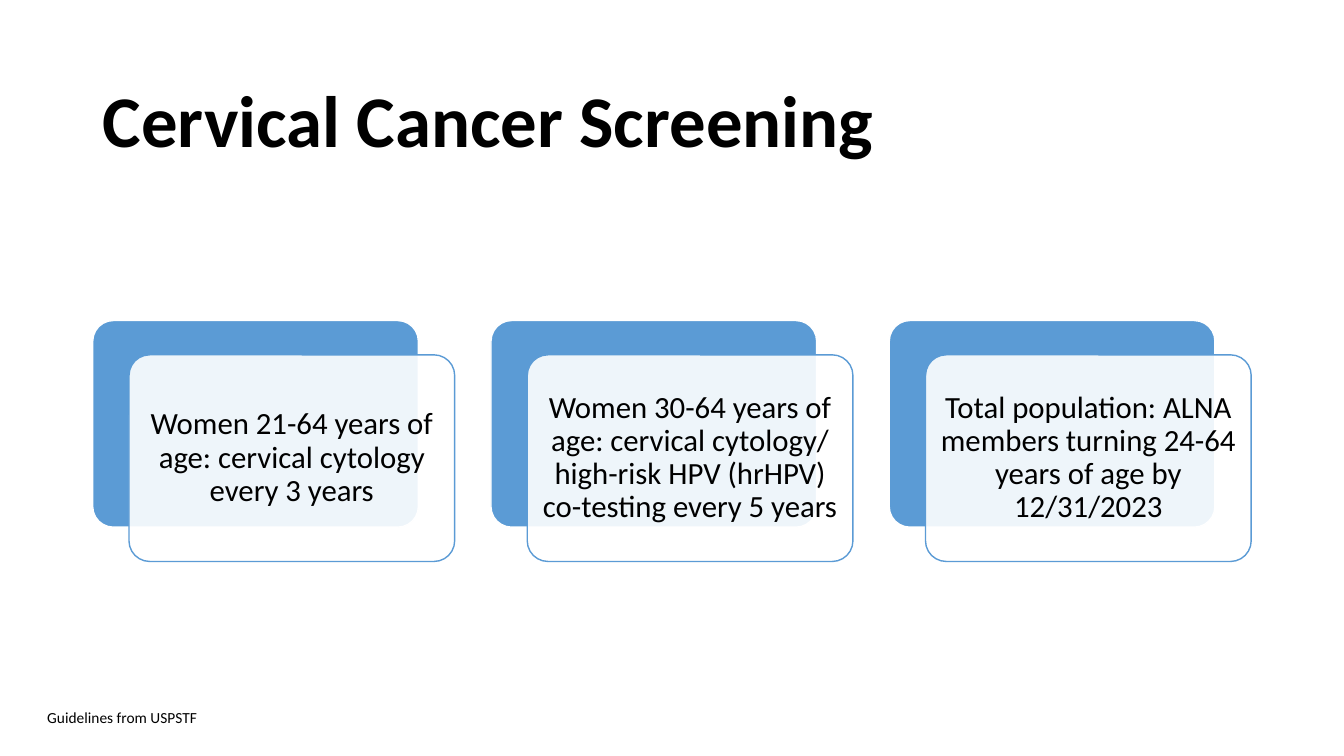
"""Build the cervical cancer screening slide with three layered cards."""
from lxml import etree
from pptx import Presentation
from pptx.dml.color import RGBColor
from pptx.enum.shapes import MSO_SHAPE
from pptx.enum.text import MSO_ANCHOR, PP_ALIGN
from pptx.oxml.ns import qn
from pptx.util import Inches, Pt

ROUNDED = MSO_SHAPE.ROUNDED_RECTANGLE
MIDDLE = MSO_ANCHOR.MIDDLE
LEFT, CENTER = PP_ALIGN.LEFT, PP_ALIGN.CENTER

COLORS = {"blue": "5B9BD5", "white": "FFFFFF", "text": "000000"}
FONT = "Calibri"
TITLE_ONLY = 5

CARD_LEFT, CARD_TOP, CARD_STEP = 0.92, 3.18, 3.95
CARD_WIDTH, CARD_HEIGHT = 3.23, 2.05
FRONT_SHIFT_X, FRONT_SHIFT_Y = 0.36, 0.34
GUIDELINES = [
    "Women 21-64 years of age: cervical cytology every 3 years",
    "Women 30-64 years of age: cervical cytology/ high-risk HPV (hrHPV) "
    "co-testing every 5 years",
    "Total population: ALNA members turning 24-64 years of age by 12/31/2023",
]


class SlideBuilder:
    def __init__(self, deck):
        self.slide = deck.slides.add_slide(deck.slide_layouts[TITLE_ONLY])

    def color(self, name):
        return RGBColor.from_string(COLORS[name])

    def set_text(self, shape, text, size, align=LEFT, spacing=1.0, bold=False):
        shape.text_frame.word_wrap = True
        para = shape.text_frame.paragraphs[0]
        para.text = text
        para.alignment = align
        para.line_spacing = spacing
        para.font.name = FONT
        para.font.size = Pt(size)
        para.font.bold = bold
        para.font.color.rgb = self.color("text")

    def title(self, text):
        title = self.slide.shapes.title
        title.left, title.top = Inches(0.92), Inches(0.61)
        title.width, title.height = Inches(11.5), Inches(1.24)
        title.text_frame.vertical_anchor = MIDDLE
        self.set_text(title, text, 52, spacing=0.9, bold=True)

    def panel(self, left, top, fill, line, opacity=100):
        panel = self.slide.shapes.add_shape(
            ROUNDED, Inches(left), Inches(top),
            Inches(CARD_WIDTH), Inches(CARD_HEIGHT))
        panel.shadow.inherit = False
        panel.adjustments[0] = 0.1
        panel.fill.solid()
        panel.fill.fore_color.rgb = self.color(fill)
        panel.line.color.rgb = self.color(line)
        panel.line.width = Pt(1)
        if opacity < 100:
            tint = panel.element.spPr.find(qn("a:solidFill"))[0]
            etree.SubElement(tint, qn("a:alpha"), val=str(opacity * 1000))
        return panel

    def card(self, left, text):
        self.panel(left, CARD_TOP, "blue", "white")
        front = self.panel(left + FRONT_SHIFT_X, CARD_TOP + FRONT_SHIFT_Y,
                           "white", "blue", opacity=90)
        frame = front.text_frame
        frame.vertical_anchor = MIDDLE
        frame.margin_left = frame.margin_right = Inches(0.09)
        frame.margin_top = frame.margin_bottom = Inches(0.09)
        self.set_text(front, text, 22, CENTER, spacing=0.9)

    def footnote(self, text):
        box = self.slide.shapes.add_textbox(
            Inches(0.37), Inches(6.98), Inches(2.84), Inches(0.29))
        self.set_text(box, text, 11)


def main():
    deck = Presentation()
    deck.slide_width, deck.slide_height = Inches(13.33), Inches(7.5)
    page = SlideBuilder(deck)
    page.title("Cervical Cancer Screening")
    for index, guideline in enumerate(GUIDELINES):
        page.card(CARD_LEFT + index * CARD_STEP, guideline)
    page.footnote("Guidelines from USPSTF")
    deck.save("out.pptx")


if __name__ == "__main__":
    main()
